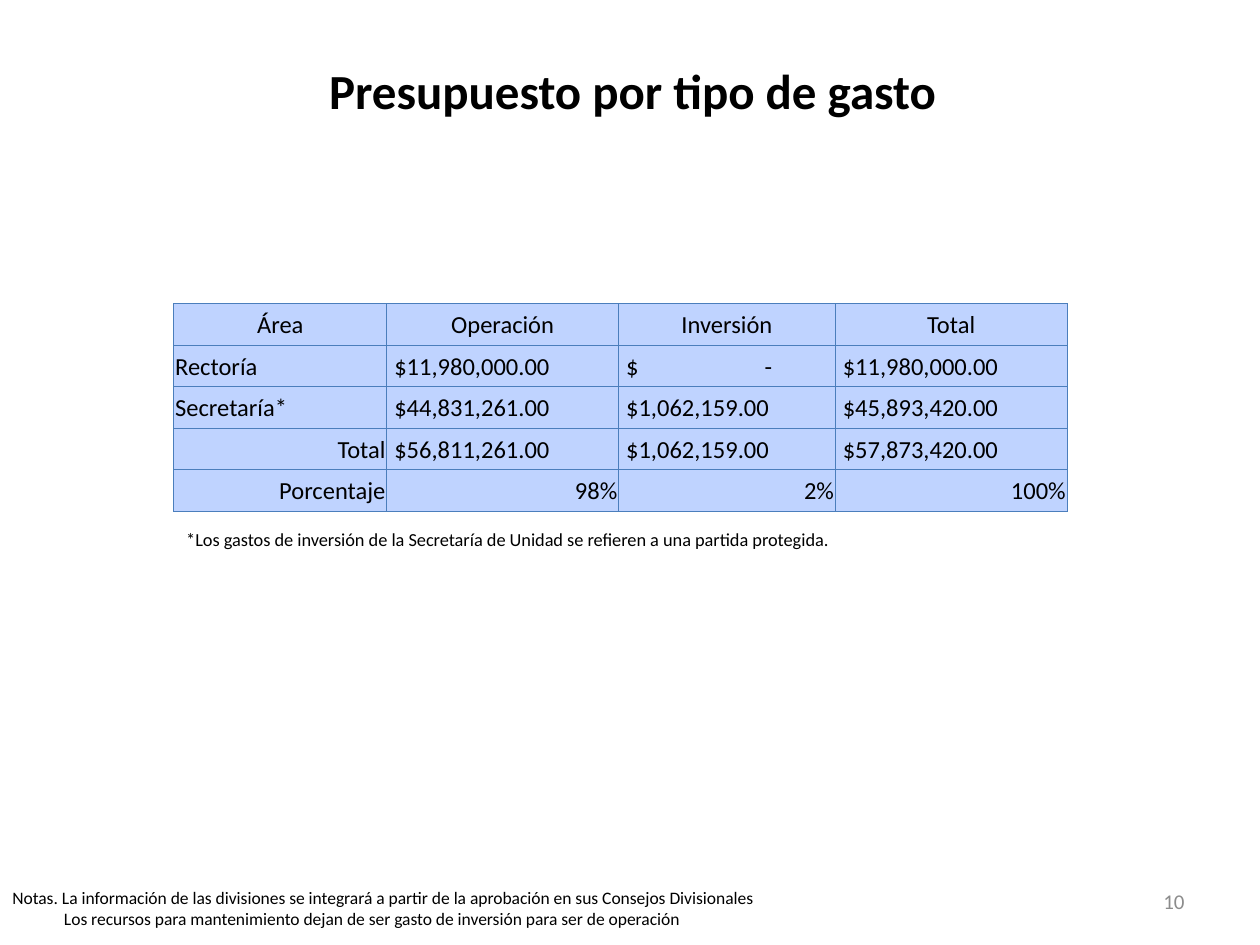
from lxml import etree
from pptx import Presentation
from pptx.dml.color import RGBColor
from pptx.enum.text import MSO_ANCHOR, MSO_AUTO_SIZE, PP_ALIGN
from pptx.oxml.ns import qn
from pptx.util import Inches, Pt

LEFT, CENTER, RIGHT = PP_ALIGN.LEFT, PP_ALIGN.CENTER, PP_ALIGN.RIGHT
MIDDLE = MSO_ANCHOR.MIDDLE
NO_FIT = MSO_AUTO_SIZE.NONE
GROW = MSO_AUTO_SIZE.SHAPE_TO_FIT_TEXT
BLACK = RGBColor(0x00, 0x00, 0x00)
GRAY = RGBColor(0x8C, 0x8C, 0x8C)
CELL_BLUE = RGBColor(0xBF, 0xD3, 0xFF)
BORDER_BLUE = RGBColor(0x4B, 0x7E, 0xBC)
FONT = "Calibri"
TITLE_ONLY = 5

COLUMN_WIDTHS = [1.69, 1.84, 1.72, 1.84]
ROW_HEIGHT = 0.33
DASH_STOP = 1.1
BUDGET = [
    ["Área", "Operación", "Inversión", "Total"],
    ["Rectoría", "$11,980,000.00", "$\t-", "$11,980,000.00"],
    ["Secretaría*", "$44,831,261.00", "$1,062,159.00", "$45,893,420.00"],
    ["Total", "$56,811,261.00", "$1,062,159.00", "$57,873,420.00"],
    ["Porcentaje", "98%", "2%", "100%"],
]
NOTES = [
    "Notas. La información de las divisiones se integrará a partir de la aprobación en sus Consejos Divisionales",
    "Los recursos para mantenimiento dejan de ser gasto de inversión para ser de operación",
]


def write(para, text, size, color=BLACK, align=LEFT, bold=False):
    para.alignment = align
    span = para.add_run()
    span.text = text
    span.font.name = FONT
    span.font.size = Pt(size)
    span.font.bold = bold
    span.font.color.rgb = color


def add_title(page, text):
    title = page.shapes.title
    title.left, title.top = Inches(1.93), Inches(0.31)
    title.width, title.height = Inches(6.18), Inches(0.68)
    frame = title.text_frame
    frame.margin_top, frame.margin_bottom = Inches(0.17), Inches(0.04)
    frame.vertical_anchor = MIDDLE
    frame.word_wrap = True
    frame.auto_size = GROW
    write(frame.paragraphs[0], text, 28, align=CENTER, bold=True)


def add_text(page, left, top, width, height, wrap=False, fit=GROW):
    box = page.shapes.add_textbox(Inches(left), Inches(top), Inches(width), Inches(height))
    frame = box.text_frame
    frame.word_wrap = wrap
    frame.auto_size = fit
    return frame


def add_borders(cell):
    properties = cell._tc.get_or_add_tcPr()
    for side in ("a:lnL", "a:lnR", "a:lnT", "a:lnB"):
        line = etree.SubElement(properties, qn(side), w=str(Pt(0.75)))
        fill = etree.SubElement(line, qn("a:solidFill"))
        etree.SubElement(fill, qn("a:srgbClr"), val=str(BORDER_BLUE))


def add_tab_stop(para, position):
    stops = etree.SubElement(para._p.get_or_add_pPr(), qn("a:tabLst"))
    etree.SubElement(stops, qn("a:tab"), pos=str(Inches(position)), algn="l")


def cell_align(row, text):
    if row == 0:
        return CENTER
    if text in ("Total", "Porcentaje") or text.endswith("%"):
        return RIGHT
    return LEFT


def fill_cell(cell, row, text):
    add_borders(cell)
    cell.fill.solid()
    cell.fill.fore_color.rgb = CELL_BLUE
    cell.vertical_anchor = MIDDLE
    cell.margin_left = Inches(0.06 if text.startswith("$") else 0.01)
    cell.margin_right = cell.margin_top = Inches(0.01)
    cell.margin_bottom = 0
    para = cell.text_frame.paragraphs[0]
    if "\t" in text:
        add_tab_stop(para, DASH_STOP)
    write(para, text, 14, align=cell_align(row, text))


def add_budget_table(page, left, top):
    table = page.shapes.add_table(
        len(BUDGET), len(COLUMN_WIDTHS), Inches(left), Inches(top),
        Inches(sum(COLUMN_WIDTHS)), Inches(ROW_HEIGHT * len(BUDGET)),
    ).table
    table.first_row = table.horz_banding = False
    for column, width in zip(table.columns, COLUMN_WIDTHS):
        column.width = Inches(width)
    for row, texts in enumerate(BUDGET):
        table.rows[row].height = Inches(ROW_HEIGHT)
        for column, text in enumerate(texts):
            fill_cell(table.cell(row, column), row, text)


def add_notes(page):
    frame = add_text(page, 0, 6.99, 6.1, 0.44)
    write(frame.paragraphs[0], NOTES[0], 10)
    second = frame.add_paragraph()
    second._p.get_or_add_pPr().set("marL", str(Inches(0.41)))
    write(second, NOTES[1], 10)


def main():
    deck = Presentation()
    deck.slide_width, deck.slide_height = Inches(10), Inches(7.5)
    page = deck.slides.add_slide(deck.slide_layouts[TITLE_ONLY])
    add_title(page, "Presupuesto por tipo de gasto")
    footnote = add_text(page, 1.38, 4.14, 5.37, 0.28)
    write(
        footnote.paragraphs[0],
        "*Los gastos de inversión de la Secretaría de Unidad se refieren a una partida protegida.",
        10.5,
    )
    number = add_text(page, 7.17, 6.95, 2.33, 0.4, wrap=True, fit=NO_FIT)
    number.vertical_anchor = MIDDLE
    write(number.paragraphs[0], "10", 12, GRAY, RIGHT)
    add_budget_table(page, 1.38, 2.41)
    add_notes(page)
    deck.save("out.pptx")


if __name__ == "__main__":
    main()
